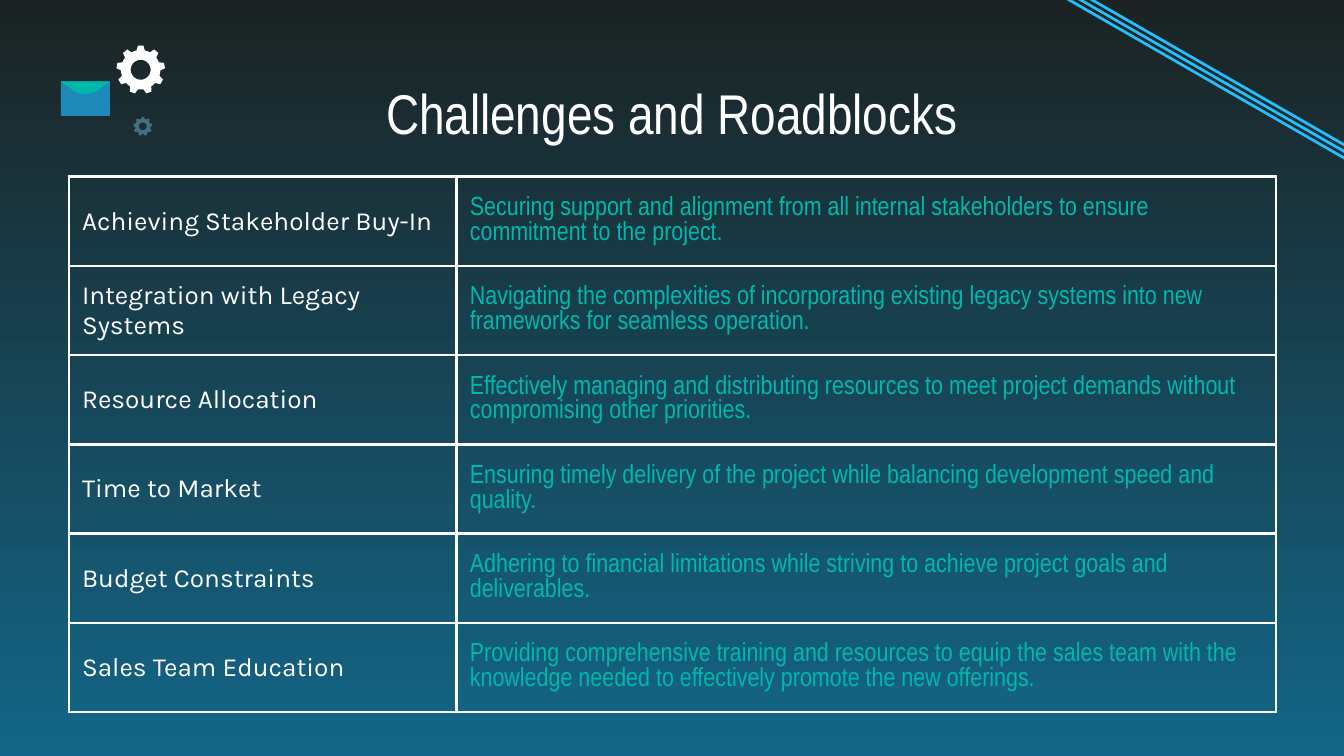
import math
from dataclasses import dataclass

import pptx
import pptx.dml.color
import pptx.enum.shapes
import pptx.enum.text
import pptx.oxml
import pptx.oxml.ns
import pptx.util
from pptx.util import Cm

WHITE, TEAL, BLUE, SKY, SLATE = "FFFFFF", "00B8AC", "1D8ABA", "24BFFF", "456F80"
HEADING_FONT, LABEL_FONT = "Arial Narrow", "Karla"
INSET = Cm(0.25)

Point = tuple[float, float]


@dataclass
class Gear:
    x: float
    y: float
    radius: float
    color: str


@dataclass
class Challenge:
    name: str
    detail: str


GEARS = [Gear(2.66, 1.32, 0.46, WHITE), Gear(2.7, 2.39, 0.18, SLATE)]

CHALLENGES = [
    Challenge("Achieving Stakeholder Buy-In",
              "Securing support and alignment from all internal stakeholders "
              "to ensure commitment to the project."),
    Challenge("Integration with Legacy Systems",
              "Navigating the complexities of incorporating existing legacy "
              "systems into new frameworks for seamless operation."),
    Challenge("Resource Allocation",
              "Effectively managing and distributing resources to meet project "
              "demands without compromising other priorities."),
    Challenge("Time to Market",
              "Ensuring timely delivery of the project while balancing "
              "development speed and quality."),
    Challenge("Budget Constraints",
              "Adhering to financial limitations while striving to achieve "
              "project goals and deliverables."),
    Challenge("Sales Team Education",
              "Providing comprehensive training and resources to equip the "
              "sales team with the knowledge needed to effectively promote "
              "the new offerings."),
]


def rgb(color: str) -> pptx.dml.color.RGBColor:
    return pptx.dml.color.RGBColor.from_string(color)


def paint(shape, color: str) -> None:
    shape.shadow.inherit = False
    shape.fill.solid()
    shape.fill.fore_color.rgb = rgb(color)
    shape.line.fill.background()


def write_text(text_frame, text: str, *, font: str, size: float, color: str,
               align=pptx.enum.text.PP_ALIGN.LEFT) -> None:
    paragraph = text_frame.paragraphs[0]
    paragraph.alignment = align
    run = paragraph.add_run()
    run.text = text
    run.font.name = font
    run.font.size = pptx.util.Pt(size)
    run.font.color.rgb = rgb(color)


def draw_outline(slide, contours: list[list[Point]], color: str) -> None:
    """Fill closed contours given in centimetres; inner contours are holes."""
    paths = [[(Cm(x), Cm(y)) for x, y in contour] for contour in contours]
    builder = slide.shapes.build_freeform(*paths[0][0])
    for index, points in enumerate(paths):
        if index:
            builder.move_to(*points[0])
        builder.add_line_segments(points[1:], close=True)
    paint(builder.convert_to_shape(), color)


def draw_gear(slide, gear: Gear, teeth: int = 9) -> None:
    def polar(degrees: float, ratio: float) -> Point:
        angle = math.radians(degrees)
        return (gear.x + gear.radius * ratio * math.sin(angle),
                gear.y - gear.radius * ratio * math.cos(angle))

    # Each tooth: root, tip, tip, root, then the arc to the next tooth
    profile = [(-12, 0.81), (-6.5, 1), (6.5, 1), (12, 0.81), (20, 0.81)]
    rim = [polar(tooth * 360 / teeth + offset, ratio)
           for tooth in range(teeth) for offset, ratio in profile]
    hole = [polar(-degrees, 0.41) for degrees in range(0, 360, 12)]
    draw_outline(slide, [rim, hole], gear.color)


def bezier(start: Point, first: Point, second: Point, end: Point,
           steps: int = 16) -> list[Point]:
    points = []
    for step in range(steps + 1):
        t = step / steps
        weights = ((1 - t) ** 3, 3 * t * (1 - t) ** 2, 3 * t * t * (1 - t), t ** 3)
        controls = (start, first, second, end)
        points.append((sum(w * p[0] for w, p in zip(weights, controls)),
                       sum(w * p[1] for w, p in zip(weights, controls))))
    return points


def draw_envelope(slide) -> None:
    body = slide.shapes.add_shape(pptx.enum.shapes.MSO_SHAPE.RECTANGLE,
                                  Cm(1.15), Cm(1.54), Cm(0.93), Cm(0.65))
    paint(body, BLUE)
    curve = bezier((1.86, 1.7), (1.71, 1.8), (1.52, 1.8), (1.37, 1.7))
    draw_outline(slide, [[(1.15, 1.54), (2.08, 1.54), *curve]], TEAL)


def draw_stripes(slide) -> None:
    left, right, drop, thickness = 19.86, 26.19, 3.64, 0.06
    for index in range(3):
        top = -0.48 + index * 0.125
        draw_outline(slide, [[(left, top), (right, top + drop),
                              (right, top + drop + thickness),
                              (left, top + thickness)]], SKY)


def add_borders(cell, color: str, width: float) -> None:
    properties = cell._tc.get_or_add_tcPr()
    for side in ("lnL", "lnR", "lnT", "lnB"):
        properties.append(pptx.oxml.parse_xml(
            f'<a:{side} {pptx.oxml.ns.nsdecls("a")} w="{pptx.util.Pt(width)}">'
            f'<a:solidFill><a:srgbClr val="{color}"/></a:solidFill></a:{side}>'))


def draw_table(slide) -> None:
    widths, row_height = (Cm(7.33), Cm(15.48)), Cm(1.68)
    table = slide.shapes.add_table(len(CHALLENGES), len(widths), Cm(1.3), Cm(3.34),
                                   sum(widths), row_height * len(CHALLENGES)).table
    table.first_row = table.horz_banding = False
    for column, width in zip(table.columns, widths):
        column.width = width
    for row, challenge in enumerate(CHALLENGES):
        table.rows[row].height = row_height
        contents = [(challenge.name, LABEL_FONT, WHITE),
                    (challenge.detail, HEADING_FONT, TEAL)]
        for column, (text, font, color) in enumerate(contents):
            cell = table.cell(row, column)
            add_borders(cell, WHITE, 1.5)
            cell.fill.background()
            cell.vertical_anchor = pptx.enum.text.MSO_ANCHOR.MIDDLE
            cell.margin_left = cell.margin_right = INSET
            cell.margin_top = cell.margin_bottom = INSET
            write_text(cell.text_frame, text, font=font, size=14, color=color)


def draw_title(slide) -> None:
    box = slide.shapes.add_textbox(Cm(1.98), Cm(1.5), Cm(21.44), Cm(1.5))
    frame = box.text_frame
    frame.word_wrap = True
    frame.vertical_anchor = pptx.enum.text.MSO_ANCHOR.BOTTOM
    frame.margin_left = frame.margin_right = INSET
    frame.margin_top = frame.margin_bottom = INSET
    write_text(frame, "Challenges and Roadblocks", font=HEADING_FONT, size=30,
               color=WHITE, align=pptx.enum.text.PP_ALIGN.CENTER)


def main() -> None:
    presentation = pptx.Presentation()
    presentation.slide_width, presentation.slide_height = Cm(25.4), Cm(14.29)
    slide = presentation.slides.add_slide(presentation.slide_layouts[6])

    # Background gradient, dark at the top
    background = slide.background.fill
    background.gradient()
    background.gradient_angle = 270
    for stop, color in zip(background.gradient_stops, ("1B2323", "136688")):
        stop.color.rgb = rgb(color)

    # Corner decoration
    for gear in GEARS:
        draw_gear(slide, gear)
    draw_envelope(slide)
    draw_stripes(slide)

    # Content
    draw_title(slide)
    draw_table(slide)
    presentation.save("out.pptx")


if __name__ == "__main__":
    main()
